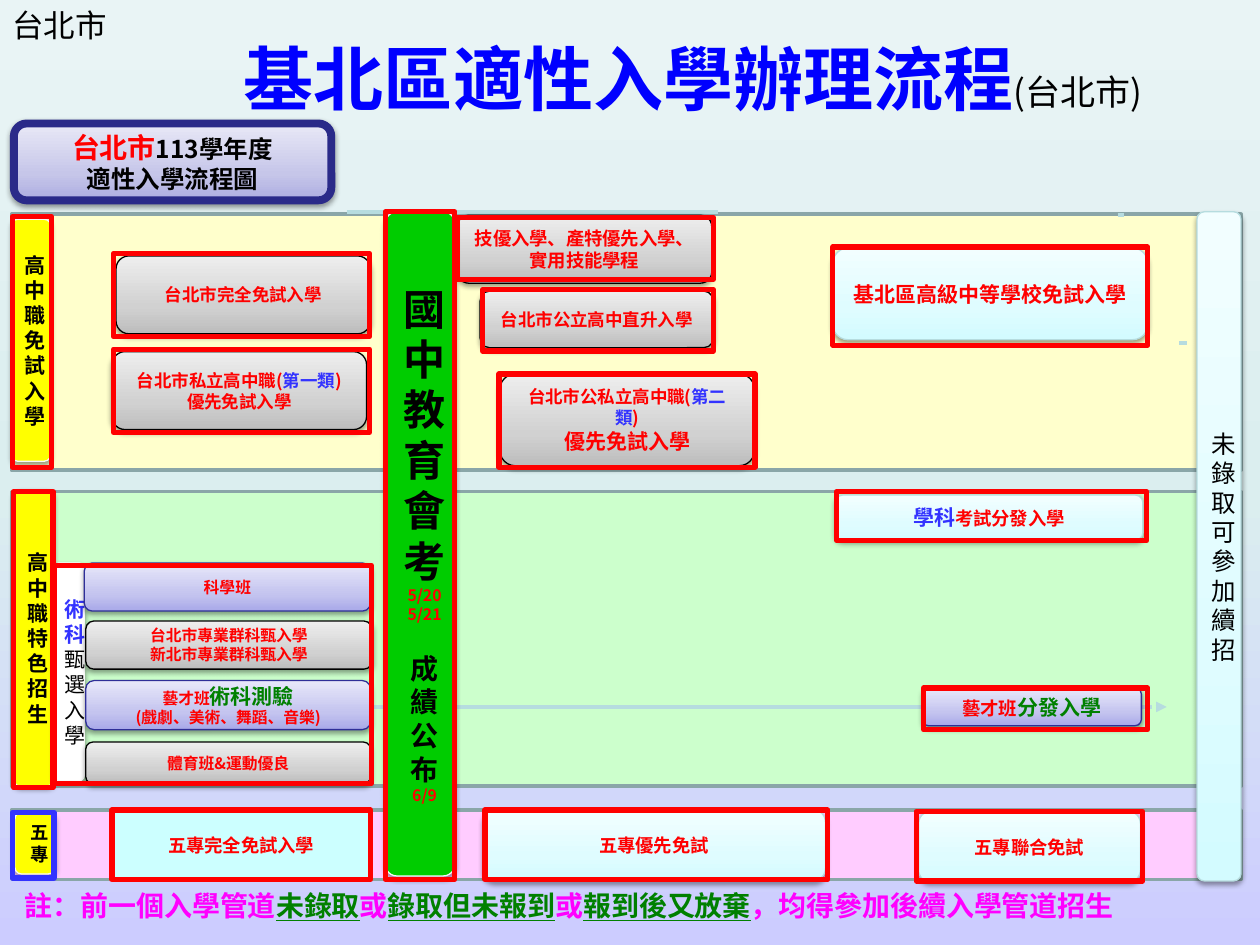
from dataclasses import dataclass
from lxml.etree import SubElement as Sub
from pptx import Presentation
from pptx.dml.color import RGBColor as Rgb
from pptx.enum.dml import MSO_LINE
from pptx.enum.shapes import MSO_CONNECTOR as Link, MSO_SHAPE as Form
from pptx.enum.text import MSO_ANCHOR as Anchor, PP_ALIGN as Align
from pptx.oxml.ns import qn
from pptx.util import Cm, Pt


@dataclass(frozen=True)
class Theme:
    # Colours
    red: str = "FF0000"
    blue: str = "3333FF"
    head: str = "0000FF"
    black: str = "000000"
    green: str = "008000"
    pink: str = "FF00FF"
    pale: str = "B6DCDF"
    edge: str = "8AA6A8"
    # Type sizes
    tiny: float = 9
    small: float = 10
    mid: float = 10.5
    norm: float = 12
    tall: float = 14
    big: float = 16
    # Fonts
    face: str = "Noto Sans CJK SC"
    title: str = "Noto Sans CJK TC"
    latin: str = "Arial"


T = Theme()
BACK = ((0, "CCCCFF"), (48, "DBEEEF"), (100, "E9F4F5"))


def shade(*tones):
    return tuple(zip((0, 35, 100), tones))


# Card looks: fill, line colour, line width
LOOKS = {
    "grey": (shade("BDBDBD", "D1D1D1", "EEEEEE"), T.black, 0.75),
    "aqua": (shade("D3FBFF", "DFFCFF", "F2FEFF"), T.pale, 0.75),
    "lilac": (shade("A9A9E9", "C4C4EF", "E8E8FA"), "2F2F98", 0.75),
    "badge": (shade("ADADE1", "C6C6E9", "E9E9F7"), "2A2A89", 4.5),
    "yellow": ("FFFF00", "F9F9F9", 0.75),
    "white": ("FFFFFF", "F9F9F9", 0.75),
    "lime": ("00CC00", "F9F9F9", 0.75),
}


def place(*at):
    """Turn inches into lengths."""
    return [Cm(round(2.54 * v, 2)) for v in at]


def run(text, size, tone=T.red, bold=True, line=False, face=T.face):
    return text, size, tone, bold, line, face


class Deck:
    def __init__(self, theme):
        self.theme = theme
        self.prs = Presentation()
        self.prs.slide_width, self.prs.slide_height = place(10, 7.5)
        self.slide = self.prs.slides.add_slide(self.prs.slide_layouts[5])
        self.items = self.slide.shapes
        self.blend(self.slide.background.fill, self.slide._element, BACK)

    def blend(self, fill, root, stops):
        fill.gradient()
        fill.gradient_angle = 90
        bag = next(root.iter(qn("a:gsLst")))
        bag.clear()
        for pos, tone in stops:
            stop = Sub(bag, qn("a:gs"), pos=str(pos * 1000))
            Sub(stop, qn("a:srgbClr"), val=tone)

    def fill_text(self, frame, paras, align=Align.CENTER, fixed=True):
        frame.word_wrap = True
        for i, runs in enumerate(paras):
            para = frame.paragraphs[0] if i == 0 else frame.add_paragraph()
            para.alignment = align
            if fixed:
                para.line_spacing = Pt(1.2 * max(r[1] for r in runs))
            for text, size, tone, bold, line, face in runs:
                piece = para.add_run()
                piece.text = text
                font = piece.font
                font.size, font.bold, font.name = Pt(size), bold, face
                font.underline = line
                font.color.rgb = Rgb.from_string(tone)
                Sub(font._element, qn("a:ea"), typeface=face)

    def block(self, at, fill, tone, width, form=Form.RECTANGLE):
        item = self.items.add_shape(form, *place(*at))
        item.shadow.inherit = False
        if fill is None:
            item.fill.background()
        elif isinstance(fill, str):
            item.fill.solid()
            item.fill.fore_color.rgb = Rgb.from_string(fill)
        else:
            self.blend(item.fill, item._element, fill)
        item.line.color.rgb = Rgb.from_string(tone)
        item.line.width = Pt(width)
        return item

    def frame(self, at, tone=T.red):
        self.block(at, None, tone, 3)

    def card(self, at, look, *paras, left=0.1, right=0.1):
        item = self.block(at, *LOOKS[look], Form.ROUNDED_RECTANGLE)
        bag = item._element.spPr.find(qn("a:effectLst"))
        cast = Sub(bag, qn("a:outerShdw"), blurRad=str(Pt(3.1)),
                   dist=str(Pt(1.6)), dir="5400000", rotWithShape="0")
        tint = Sub(cast, qn("a:srgbClr"), val=self.theme.black)
        Sub(tint, qn("a:alpha"), val="38000")
        text = item.text_frame
        text.vertical_anchor = Anchor.MIDDLE
        text.margin_left, text.margin_right = place(left, right)
        text.margin_top = text.margin_bottom = 0
        self.fill_text(text, paras)
        return item

    def pillar(self, at, look, *paras):
        """Narrow card that holds one sign per line."""
        return self.card(at, look, *paras, left=0.07, right=0)

    def label(self, at, runs):
        item = self.items.add_textbox(*place(*at))
        self.fill_text(item.text_frame, [runs], Align.LEFT, False)

    def head(self, at, runs):
        item = self.items.title
        item.left, item.top, item.width, item.height = place(*at)
        item.text_frame.vertical_anchor = Anchor.MIDDLE
        self.fill_text(item.text_frame, [runs], fixed=False)

    def rule(self, x, end, y, width=2.25, arrow=False):
        item = self.items.add_connector(Link.STRAIGHT, *place(x, y, end, y))
        item.line.color.rgb = Rgb.from_string(self.theme.pale)
        item.line.width = Pt(width)
        shell = item._element.spPr
        if arrow:
            item.line.dash_style = MSO_LINE.SQUARE_DOT
            Sub(shell.find(qn("a:ln")), qn("a:tailEnd"), type="triangle")
        Sub(shell, qn("a:effectLst"))


def main():
    deck = Deck(T)
    deck.head((1, 0.2, 9, 0.83), [
        run("基北區適性入學辦理流程", 40, T.head, face=T.title),
        run("(台北市)", 20, T.black, False, face=T.title)])

    # Bands and guide lines
    for top, high, fill in ((6.43, 0.55, "FFCCFF"), (3.9, 2.34, "CCFFCC"),
                            (1.7, 2.03, "FFFFCC")):
        deck.block((0.09, top, 9.76, high), fill, T.edge, 2)
    for x, end, y in ((2.75, 5.7, 1.68), (1.81, 8.89, 5.61),
                      (8.87, 8.92, 1.71), (9.36, 9.42, 2.72)):
        deck.rule(x, end, y)
    deck.rule(8.95, 9.26, 5.61, 2, arrow=True)

    # Badge and row heads
    deck.card((0.11, 0.98, 2.52, 0.61), "badge",
              [run("台北市", T.big), run("113學年度", T.tall, T.black)],
              [run("適性入學流程圖", T.tall, T.black)])
    for at, text, size in (((0.09, 1.74, 0.31, 1.92), "高中職免試入學", T.norm),
                           ((0.11, 3.89, 0.31, 2.35), "高中職特色招生", T.norm),
                           ((0.12, 6.45, 0.32, 0.49), "五專", T.mid)):
        deck.pillar(at, "yellow", [run(text, size, T.black)])
    deck.pillar((0.43, 4.47, 0.24, 1.73), "white",
                [run("術科", T.norm, T.blue),
                 run("甄選入學", T.norm, T.black, False)])

    # Cards with one plain red line
    for at, look, text, size in (
            ((6.61, 1.97, 2.5, 0.73), "aqua", "基北區高級中等學校免試入學", T.norm),
            ((0.67, 4.47, 2.27, 0.38), "lilac", "科學班", T.tiny),
            ((0.68, 5.89, 2.26, 0.33), "grey", "體育班&運動優良", T.tiny),
            ((3.63, 1.71, 2.02, 0.54), "grey",
             "技優入學、產特優先入學、實用技能學程", T.mid),
            ((0.92, 2.03, 2.02, 0.62), "grey", "台北市完全免試入學", T.small),
            ((3.81, 2.31, 1.85, 0.45), "grey", "台北市公立高中直升入學", T.small),
            ((3.83, 6.43, 2.72, 0.56), "aqua", "五專優先免試", T.mid),
            ((7.29, 6.44, 1.76, 0.56), "aqua", "五專聯合免試", T.mid)):
        deck.card(at, look, [run(text, size)])

    # Cards with mixed text
    deck.card((6.63, 3.93, 2.44, 0.36), "aqua",
              [run("學科", T.norm, T.blue), run("考試分發入學", T.mid)])
    deck.card((0.68, 4.93, 2.27, 0.38), "grey",
              *([run(f"{city}專業群科甄入學", T.tiny)] for city in ("台北市", "新北市")))
    deck.card((0.68, 5.4, 2.26, 0.39), "lilac",
              [run("藝才班", T.tiny), run("術科測驗", T.norm, T.green)],
              [run("(戲劇、美術、舞蹈、音樂)", T.tiny)])
    deck.card((7.32, 5.46, 1.74, 0.3), "lilac",
              [run("藝才班", T.mid), run("分發入學", T.norm, T.green)])
    for at, kind, group, size in (
            ((3.97, 2.97, 2.02, 0.73), "公私立", "第二類", T.norm),
            ((0.89, 2.79, 2.02, 0.62), "私立", "第一類", T.small)):
        deck.card(at, "grey",
                  [run(f"台北市{kind}高中職(", T.small),
                   run(group, T.small, T.blue), run(")", T.small)],
                  [run("優先免試入學", size)])

    # Exam and follow-up pillars
    exam = deck.pillar((3.06, 1.68, 0.55, 5.27), "lime",
                       [run("國中教育會考", 24, T.black)],
                       [run("5/20", T.tiny)], [run("5/21", T.tiny)],
                       [run("成績公布", T.big, T.black)],
                       [run("6/9", T.tiny)])
    exam.text_frame.paragraphs[3].space_before = Pt(16)
    deck.pillar((9.5, 1.68, 0.35, 5.31), "aqua",
                [run("未錄取可參加續招", T.tall, T.black, False)])

    # Frames
    for at in ((0.1, 1.72, 0.31, 1.99), (0.11, 3.9, 0.31, 2.35),
               (3.06, 1.68, 0.55, 5.3), (7.27, 6.44, 1.8, 0.55),
               (6.61, 1.96, 2.5, 0.78), (6.64, 3.9, 2.46, 0.39),
               (3.96, 2.97, 2.03, 0.74), (0.9, 2.77, 2.03, 0.66),
               (3.85, 6.43, 2.72, 0.55), (3.83, 2.3, 1.83, 0.49),
               (0.43, 4.49, 2.52, 1.73), (3.63, 1.73, 2.03, 0.49),
               (0.9, 2.01, 2.03, 0.66), (7.33, 5.46, 1.78, 0.33)):
        deck.frame(at)
    deck.frame((0.1, 6.45, 0.33, 0.52), T.blue)
    full = deck.block((0.89, 6.43, 2.05, 0.55), "CCFFFF", T.red, 3)
    full.text_frame.vertical_anchor = Anchor.MIDDLE
    deck.fill_text(full.text_frame, [[run("五專完全免試入學", T.mid)]])

    # Corner label and note
    deck.label((0, 0, 1.5, 0.4),
               [run("台北市", 18, T.black, False, face=T.latin)])
    note = ("註：前一個入學管道", "未錄取", "或", "錄取但未報到", "或",
            "報到後又放棄", "，均得參加後續入學管道招生")
    deck.label((0.1, 7, 9.73, 0.37),
               [run(text, T.big, T.green if i % 2 else T.pink, line=bool(i % 2))
                for i, text in enumerate(note)])
    deck.prs.save("out.pptx")


if __name__ == "__main__":
    main()
